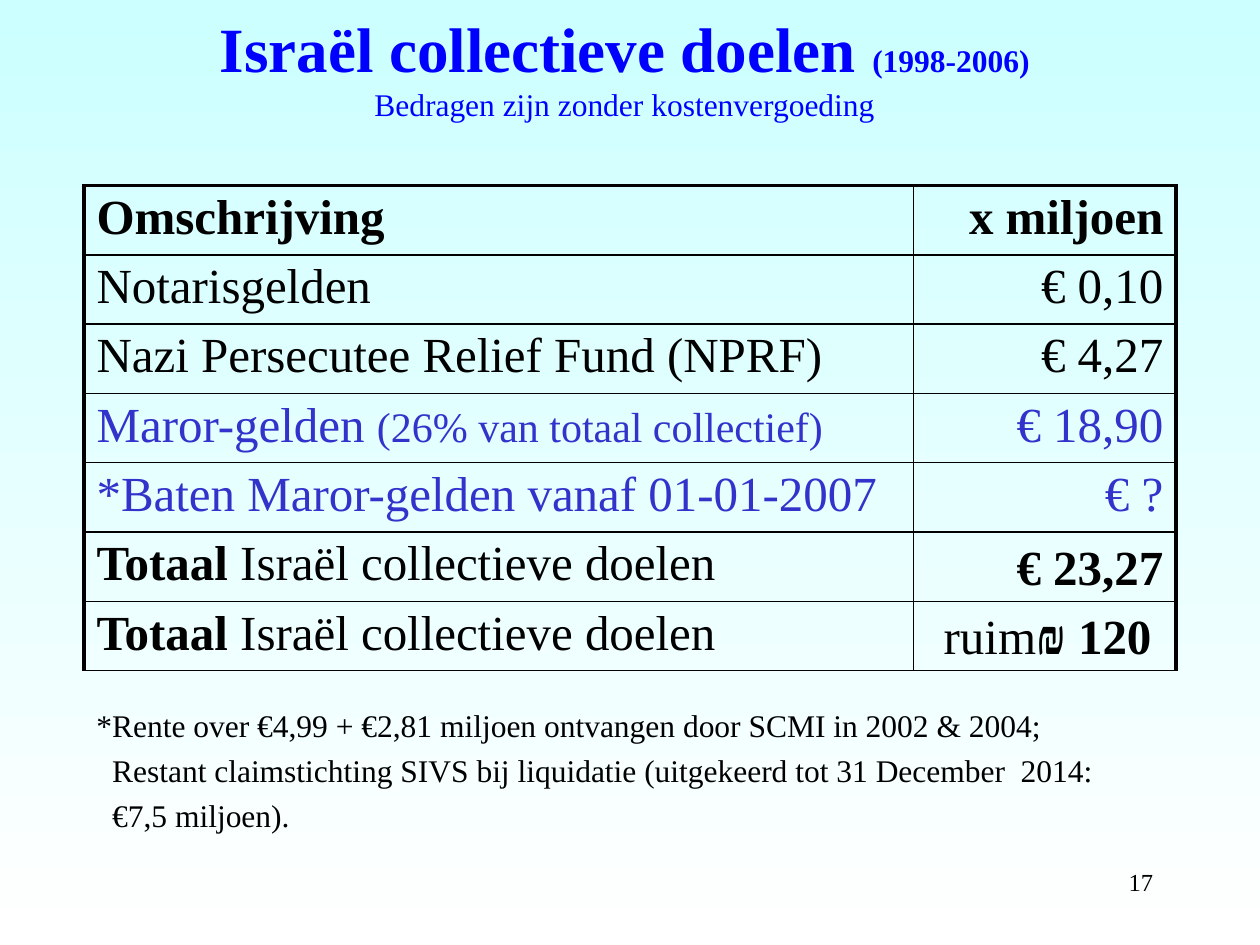
from lxml import etree
from pptx import Presentation
from pptx.dml.color import RGBColor
from pptx.enum.text import MSO_ANCHOR, MSO_AUTO_SIZE, PP_ALIGN
from pptx.oxml.ns import qn
from pptx.util import Pt

LEFT, MID, RIGHT = PP_ALIGN.LEFT, PP_ALIGN.CENTER, PP_ALIGN.RIGHT
TOP, CENTER, BOTTOM = MSO_ANCHOR.TOP, MSO_ANCHOR.MIDDLE, MSO_ANCHOR.BOTTOM
FIXED = MSO_AUTO_SIZE.NONE

HUES = {"ink": "000000", "title": "0000FF", "maror": "3333CC",
        "sky": "CCFFFF", "white": "FFFFFF"}
THIN, THICK = 1, 2.25


class Deck:
    font = "Times New Roman"

    def __init__(self):
        self.prs = Presentation()
        self.prs.slide_width, self.prs.slide_height = Pt(720), Pt(540)
        self.slide = self.prs.slides.add_slide(self.prs.slide_layouts[5])

    def back(self, *hues):
        fill = self.slide.background.fill
        fill.gradient()
        fill.gradient_angle = 270
        for stop, hue in zip(fill.gradient_stops, hues):
            stop.color.rgb = RGBColor.from_string(HUES[hue])

    def run(self, para, text, size, hue="ink", bold=False):
        run = para.add_run()
        run.text = text
        font = run.font
        font.name, font.size, font.bold = self.font, Pt(size), bold
        font.color.rgb = RGBColor.from_string(HUES[hue])

    def title(self, box, lines):
        shape = self.slide.shapes.title
        shape.left, shape.top, shape.width, shape.height = map(Pt, box)
        frame = shape.text_frame
        frame.word_wrap, frame.auto_size = True, FIXED
        frame.vertical_anchor = CENTER
        para = frame.paragraphs[0]
        para.alignment = MID
        for i, line in enumerate(lines):
            if i:
                para.add_line_break()
            for text, size, bold in line:
                self.run(para, text, size, "title", bold)

    def text(self, box, lines, size, align=LEFT, gap=0, indent=0):
        frame = self.slide.shapes.add_textbox(*map(Pt, box)).text_frame
        frame.word_wrap = True
        for i, line in enumerate(lines):
            para = frame.add_paragraph() if i else frame.paragraphs[0]
            para.alignment, para.space_before = align, Pt(gap)
            if i and indent:
                para._p.get_or_add_pPr().set("marL", str(Pt(indent)))
            self.run(para, line, size)

    def edges(self, cell, sides):
        props = cell._tc.get_or_add_tcPr()
        for i, (side, width) in enumerate(sides.items()):
            line = etree.Element(qn("a:ln" + side), w=str(Pt(width)))
            fill = etree.SubElement(line, qn("a:solidFill"))
            etree.SubElement(fill, qn("a:srgbClr"), val=HUES["ink"])
            props.insert(i, line)

    def cell(self, cell, runs, hue, align, anchor):
        cell.fill.background()
        cell.vertical_anchor = anchor
        cell.margin_top = cell.margin_bottom = Pt(3)
        para = cell.text_frame.paragraphs[0]
        para.alignment = align
        for text, size, bold in runs:
            self.run(para, text, size, hue, bold)

    def table(self, left, top, cols, high, rows):
        shape = self.slide.shapes.add_table(
            len(rows), len(cols), Pt(left), Pt(top),
            Pt(sum(cols)), Pt(high * len(rows)))
        grid = shape.table
        grid.first_row = grid.horz_banding = False
        for col, width in zip(grid.columns, cols):
            col.width = Pt(width)
        for r, (hue, anchor, *cells) in enumerate(rows):
            grid.rows[r].height = Pt(high)
            for c, runs in enumerate(cells):
                cell = grid.cell(r, c)
                self.cell(cell, runs, hue, RIGHT if c else LEFT,
                          anchor if c else TOP)
                self.edges(cell, {"L": THIN if c else THICK,
                                  "R": THICK if c else THIN,
                                  "T": THIN if r else THICK,
                                  "B": THIN})
        return grid


def plain(text, size=28):
    return text, size, False


def bold(text, size=28):
    return text, size, True


def main():
    deck = Deck()
    deck.back("sky", "white")
    deck.text((516, 492, 150, 36), ["17"], 14, RIGHT)
    deck.title((48, 9.5, 618, 57), [
        [bold("Israël collectieve doelen ", 36), bold("(1998-2006)", 18)],
        [plain("Bedragen zijn zonder kostenvergoeding", 18)],
    ])
    total = [bold("Totaal "), plain("Israël collectieve doelen")]
    grid = deck.table(48, 106, (474, 150), 38.5, [
        ("ink", TOP, [bold("Omschrijving")], [bold("x miljoen")]),
        ("ink", TOP, [plain("Notarisgelden")], [plain("€ 0,10")]),
        ("ink", TOP, [plain("Nazi Persecutee Relief Fund (NPRF)")],
         [plain("€ 4,27")]),
        ("maror", TOP, [plain("Maror-gelden "),
                        plain("(26% van totaal collectief)", 24)],
         [plain("€ 18,90")]),
        ("maror", TOP, [plain("*Baten Maror-gelden vanaf 01-01-2007")],
         [plain("€ ?")]),
        ("ink", BOTTOM, total, [bold("€ 23,27")]),
        ("ink", BOTTOM, total, [plain("ruim"), bold("₪ 120")]),
    ])
    grid.cell(6, 1).margin_right = Pt(14)
    deck.text((48, 400, 624, 81.5), [
        "*Rente over €4,99 + €2,81 miljoen ontvangen door SCMI in 2002 & 2004;",
        "Restant claimstichting SIVS bij liquidatie "
        "(uitgekeerd tot 31 December  2014:",
        "€7,5 miljoen).",
    ], 18, gap=4, indent=9)
    deck.prs.save("out.pptx")


if __name__ == "__main__":
    main()
